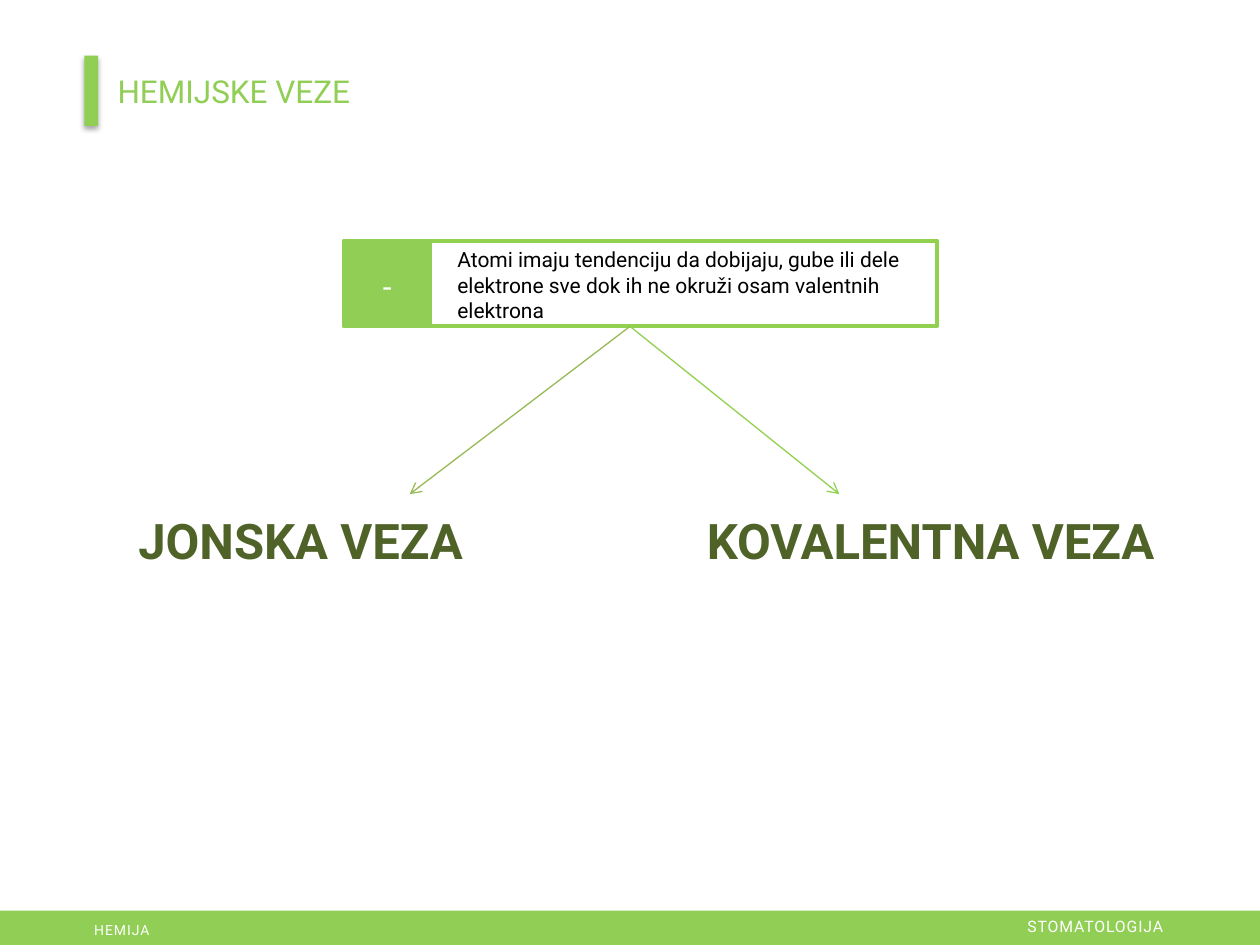
"""Build the slide on chemical bonds."""
import pptx
import pptx.dml.color
import pptx.enum.shapes
import pptx.enum.text
import pptx.oxml
import pptx.oxml.ns
import pptx.util
from pptx.util import Cm, Pt

COLORS = {"green": "91CE55", "lime": "92D050", "olive": "98B955",
          "dark": "4F6228", "white": "FFFFFF", "black": "000000"}
FONT = "Roboto"
WIDTH, HEIGHT = 25.4, 19.05
ALIGN = pptx.enum.text.PP_ALIGN
WIDE, TIGHT = (0.25, 0.13), (0.13, 0.08)

TITLE = "HEMIJSKE VEZE"
RULE = ("Atomi imaju tendenciju da dobijaju, gube ili dele elektrone "
        "sve dok ih ne okruži osam valentnih elektrona")
BOX = {"left": 6.93, "top": 4.85, "height": 1.73, "marker": 1.75, "frame": 10.21}
FOOTER_TOP = 18.36
BONDS = [
    {"text": "JONSKA VEZA", "left": 2.54, "width": 7.11, "tip": 8.26, "color": "olive"},
    {"text": "KOVALENTNA VEZA", "left": 14.0, "width": 9.7, "tip": 16.92, "color": "lime"},
]
FOOTERS = [
    {"text": "HEMIJA", "box": (1.65, 18.44, 11.68, 0.61), "size": 8, "align": ALIGN.LEFT},
    {"text": "STOMATOLOGIJA", "box": (16.21, 18.36, 7.49, 0.64), "size": 9, "align": ALIGN.RIGHT},
]


def rgb(name):
    return pptx.dml.color.RGBColor.from_string(COLORS[name])


def add_effects(shape, content=""):
    xml = f'<a:effectLst {pptx.oxml.ns.nsdecls("a")}>{content}</a:effectLst>'
    shape._element.spPr.append(pptx.oxml.parse_xml(xml))


def write(shape, text, size, color, align=ALIGN.LEFT, bold=False,
          insets=WIDE, wrap=True, spacing=None):
    tf = shape.text_frame
    tf.word_wrap = wrap
    tf.auto_size = pptx.enum.text.MSO_AUTO_SIZE.NONE
    tf.vertical_anchor = pptx.enum.text.MSO_ANCHOR.TOP
    tf.margin_left = tf.margin_right = Cm(insets[0])
    tf.margin_top = tf.margin_bottom = Cm(insets[1])
    p = tf.paragraphs[0]
    r = p.add_run()
    r.text = text
    p.alignment = align
    p.font.name, p.font.size, p.font.bold = FONT, Pt(size), bold
    p.font.color.rgb = rgb(color)
    if spacing:
        r.font._element.set("spc", str(spacing))


def add_text(s, box, text, size, color, **options):
    write(s.shapes.add_textbox(*map(Cm, box)), text, size, color, **options)


def add_rect(s, box, fill=None, line=None):
    sp = s.shapes.add_shape(pptx.enum.shapes.MSO_SHAPE.RECTANGLE, *map(Cm, box))
    sp.shadow.inherit = False
    if fill:
        sp.fill.solid()
        sp.fill.fore_color.rgb = rgb(fill)
    else:
        sp.fill.background()
    if line:
        sp.line.color.rgb = rgb(line)
        sp.line.width = Pt(2.25)
    else:
        sp.line.fill.background()
    return sp


def add_arrow(s, start, end, color):
    sp = s.shapes.add_connector(pptx.enum.shapes.MSO_CONNECTOR.STRAIGHT,
                                *map(Cm, start + end))
    sp.line.color.rgb = rgb(color)
    sp.line.width = Pt(0.75)
    xml = f'<a:tailEnd {pptx.oxml.ns.nsdecls("a")} type="arrow"/>'
    sp.line._get_or_add_ln().append(pptx.oxml.parse_xml(xml))
    add_effects(sp)


def add_title(s):
    sp = s.shapes.title
    sp.left, sp.top, sp.width, sp.height = map(Cm, (2.24, 1.37, 21.18, 0.89))
    write(sp, TITLE, 18, "green", insets=TIGHT)
    bar = add_rect(s, (1.7, 1.12, 0.28, 1.42), "green")
    bar._element.spPr.remove(bar._element.spPr.find(pptx.oxml.ns.qn("a:effectLst")))
    add_effects(bar, f'<a:outerShdw blurRad="{Pt(3.1)}" dist="{Pt(1.8)}" dir="5400000" '
                     f'rotWithShape="0"><a:srgbClr val="{COLORS["black"]}">'
                     '<a:alpha val="35000"/></a:srgbClr></a:outerShdw>')


def add_rule(s):
    left, top, height, marker = (BOX[k] for k in ("left", "top", "height", "marker"))
    frame_left = left + marker
    add_text(s, (frame_left + 0.41, top + 0.05, 9.37, 1.68), RULE, 12, "black", insets=TIGHT)
    add_rect(s, (frame_left, top, BOX["frame"], height), line="lime")
    add_rect(s, (left, top, marker, height), "green", "green")
    add_text(s, (left, top + 0.41, marker, 1.02), "-", 18, "white", align=ALIGN.CENTER)


def main():
    prs = pptx.Presentation()
    prs.slide_width, prs.slide_height = Cm(WIDTH), Cm(HEIGHT)
    s = prs.slides.add_slide(prs.slide_layouts.get_by_name("Title Only"))
    add_title(s)
    add_rule(s)
    for bond in BONDS:
        add_arrow(s, (WIDTH / 2, BOX["top"] + BOX["height"]), (bond["tip"], 9.96), bond["color"])
        add_text(s, (bond["left"], 10.16, bond["width"], 1.45), bond["text"], 28, "dark",
                 bold=True, wrap=False)
    add_rect(s, (0, FOOTER_TOP, WIDTH, HEIGHT - FOOTER_TOP), "green")
    for footer in FOOTERS:
        add_text(s, footer["box"], footer["text"], footer["size"], "white",
                 align=footer["align"], spacing=50)
    prs.save("out.pptx")


if __name__ == "__main__":
    main()
